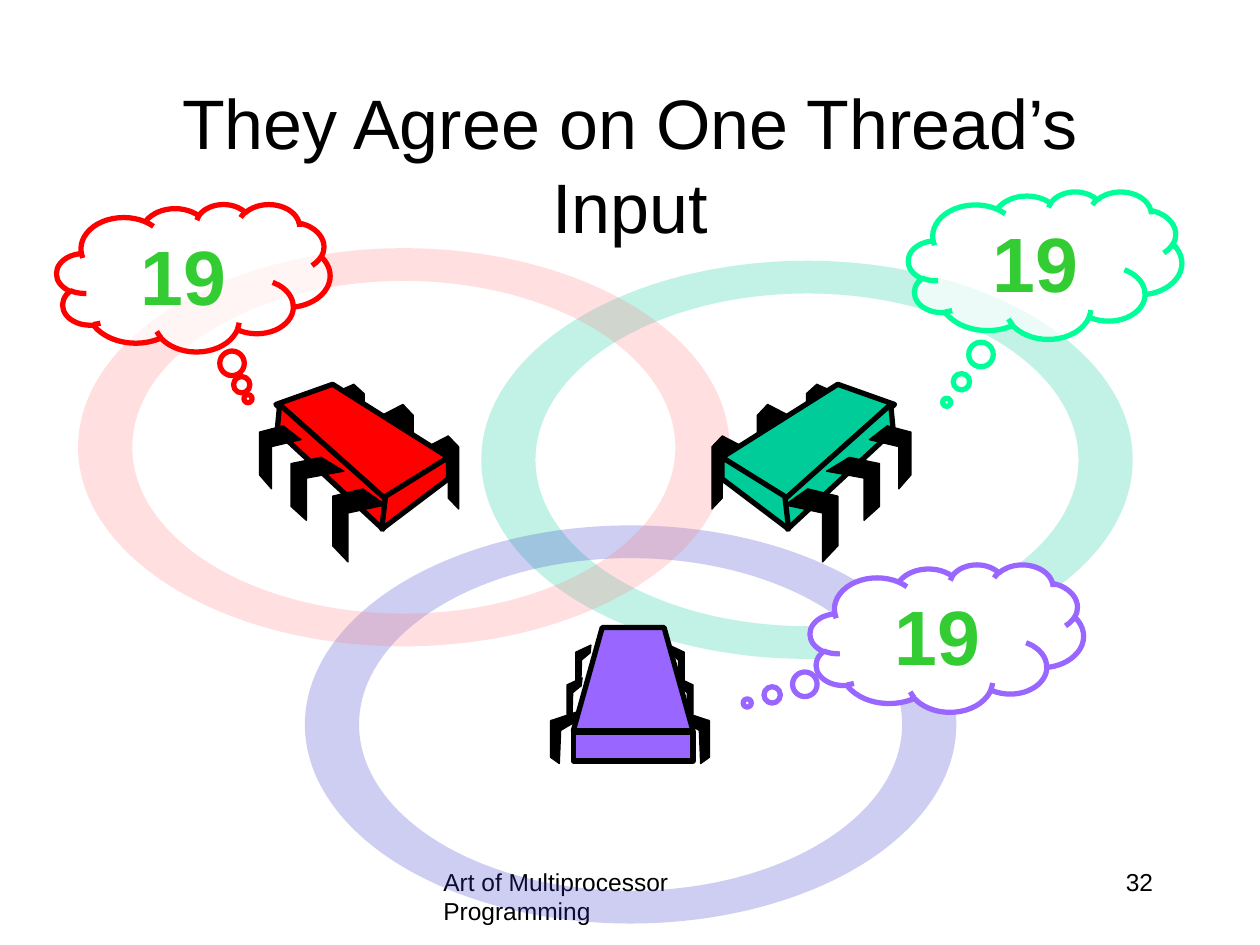
from collections import namedtuple

from lxml import etree
from pptx import Presentation
from pptx import util as u
from pptx.dml.color import RGBColor
from pptx.enum import shapes, text
from pptx.oxml.ns import qn

Box = namedtuple("Box", "left top width height")
BLACK, WHITE, VALUE_GREEN = "000000", "FFFFFF", "33CC33"
RED, GREEN, PURPLE = "FF0000", "00CC99", "9966FF"

# Outlines as fractions of the box around them
BACK_LEG = [(0, .15), (.67, 0), (1, .15), (1, 1), (.67, .85), (.67, .29), (0, .43)]
FRONT_LEG = [(.57, 0), (1, .22), (.29, .33), (.29, 1), (0, .78), (0, .1)]
SIDE_LEG = [(0, 0), (1, .17), (1, .88), (.67, 1), (.62, .36), (.06, .19)]

# Parts of a slanted spider, in inches from its top left corner
BACK_LEGS = [Box(1.33, .41, .25, .58), Box(.97, .16, .25, .58), Box(.58, 0, .25, .5)]
BODY_FACES = [
    [(.58, 0), (1.5, .58), (.98, .92), (.13, .16)],
    [(.16, .16), (1, .91), (.98, 1.15), (.14, .37)],
    [(1.5, .58), (1.5, .75), (.97, 1.15), (1, .89)],
]
FRONT_LEGS = [Box(.58, .83, .42, .58), Box(.25, .58, .42, .5), Box(0, .33, .33, .5)]


def color(value):
    return RGBColor.from_string(value)


def paint(shape, fill, line=None, weight=.75, opacity=100):
    shape.shadow.inherit = False
    shape.fill.solid()
    shape.fill.fore_color.rgb = color(fill)
    if opacity < 100:
        tint = shape.element.spPr.find(qn("a:solidFill")).find(qn("a:srgbClr"))
        etree.SubElement(tint, qn("a:alpha"), val=str(opacity * 1000))
    if line:
        shape.line.color.rgb = color(line)
        shape.line.width = u.Pt(weight)
    else:
        shape.line.fill.background()


def write(shape, words, size, align, ink=BLACK, bold=False, anchor=text.MSO_ANCHOR.TOP):
    frame = shape.text_frame
    frame.word_wrap = True
    frame.vertical_anchor = anchor
    para = frame.paragraphs[0]
    para.alignment = align
    span = para.add_run()
    span.text = words
    span.font.name = "Arial"
    span.font.size = u.Pt(size)
    span.font.bold = bold
    span.font.color.rgb = color(ink)


def add_label(page, box, words, size, align, anchor=text.MSO_ANCHOR.TOP):
    label = page.shapes.add_textbox(*map(u.Inches, box))
    write(label, words, size, align, anchor=anchor)


def add_preset(page, kind, box):
    return page.shapes.add_shape(kind, *map(u.Inches, box))


def add_outline(page, points):
    points = [(u.Inches(x), u.Inches(y)) for x, y in points]
    builder = page.shapes.build_freeform(*points[0], scale=1.0)
    builder.add_line_segments(points[1:], close=True)
    return builder.convert_to_shape()


def add_leg(page, outline, box, flipped=False):
    points = [(box.left + (1 - x if flipped else x) * box.width,
               box.top + y * box.height) for x, y in outline]
    paint(add_outline(page, points), BLACK, BLACK)


def add_ring(page, box, fill, band_x=.43, band_y=.26):
    """Draw an elliptical ring whose band is wider at the sides than above and below."""
    right, bottom = box.left + box.width, box.top + box.height
    ring = add_outline(page, [(box.left, box.top), (right, box.top),
                              (right, bottom), (box.left, bottom)])
    route = ring.element.spPr.find(".//" + qn("a:path"))
    for step in list(route):
        route.remove(step)
    middle = u.Inches(box.height / 2)
    for inset_x, inset_y, sweep in ((0, 0, 21600000), (band_x, band_y, -21600000)):
        start = etree.SubElement(route, qn("a:moveTo"))
        etree.SubElement(start, qn("a:pt"), x=str(u.Inches(inset_x)), y=str(middle))
        for half in range(2):
            etree.SubElement(route, qn("a:arcTo"),
                             wR=str(u.Inches(box.width / 2 - inset_x)),
                             hR=str(u.Inches(box.height / 2 - inset_y)),
                             stAng=str(10800000 * (1 - half)), swAng=str(sweep // 2))
        etree.SubElement(route, qn("a:close"))
    paint(ring, fill, opacity=24)


def add_thought(page, box, tail, line, opacity=100):
    cloud = add_preset(page, shapes.MSO_SHAPE.CLOUD_CALLOUT, box)
    cloud.adjustments[0], cloud.adjustments[1] = tail
    paint(cloud, WHITE, line, 3, opacity)
    write(cloud, "19", 44, text.PP_ALIGN.CENTER, VALUE_GREEN, True, text.MSO_ANCHOR.MIDDLE)


def add_slanted_spider(page, box, fill, flipped=False):
    def place_legs(outline, legs):
        for leg in legs:
            x = box.width - leg.left - leg.width if flipped else leg.left
            add_leg(page, outline, Box(box.left + x, box.top + leg.top, leg.width, leg.height),
                    flipped)

    place_legs(BACK_LEG, BACK_LEGS)
    for face in BODY_FACES:
        points = [(box.left + (box.width - x if flipped else x), box.top + y)
                  for x, y in face]
        paint(add_outline(page, points), fill, BLACK, 3)
    place_legs(FRONT_LEG, FRONT_LEGS)


def add_facing_spider(page, box, fill):
    def place_pair(top, inset, width, height):
        left = box.left + inset
        right = box.left + box.width - inset - width
        add_leg(page, SIDE_LEG, Box(right, box.top + top, width, height))
        add_leg(page, SIDE_LEG, Box(left, box.top + top, width, height), True)

    place_pair(.67, 0, .21, .41)
    place_pair(.4, .13, .12, .33)
    back = add_preset(page, shapes.MSO_SHAPE.TRAPEZOID,
                      Box(box.left + .18, box.top, .95, .82))
    back.adjustments[0] = .28
    paint(back, fill, BLACK, 3)
    front = add_preset(page, shapes.MSO_SHAPE.RECTANGLE,
                       Box(box.left + .18, box.top + .83, .95, .23))
    paint(front, fill, BLACK, 3)
    place_pair(.14, .2, .12, .33)


def main():
    deck = Presentation()
    deck.slide_width, deck.slide_height = u.Inches(10), u.Inches(7.5)
    page = deck.slides.add_slide(deck.slide_layouts[6])

    add_label(page, Box(3.42, 6.83, 3.17, .5), "Art of Multiprocessor Programming",
              14, text.PP_ALIGN.LEFT)
    add_label(page, Box(7.17, 6.83, 2.08, .5), "32", 14, text.PP_ALIGN.RIGHT)
    add_ring(page, Box(3.82, 2.07, 5.17, 3.16), GREEN)
    add_ring(page, Box(2.42, 4.17, 5.17, 3.16), "3333CC")
    add_label(page, Box(.75, .67, 8.5, 1.25), "They Agree on One Thread’s Input",
              40, text.PP_ALIGN.CENTER, text.MSO_ANCHOR.MIDDLE)
    add_ring(page, Box(.62, 1.97, 5.17, 3.16), "FF7C80")

    add_facing_spider(page, Box(4.37, 4.98, 1.26, 1.09), PURPLE)
    add_thought(page, Box(.45, 1.62, 2.17, 1.17), (.2, .82), RED, 70)
    add_thought(page, Box(7.21, 1.52, 2.17, 1.17), (-.36, .93), "00FF99", 70)
    add_slanted_spider(page, Box(2.06, 3.05, 1.58, 1.41), RED)
    add_slanted_spider(page, Box(5.65, 3.05, 1.58, 1.41), GREEN, flipped=True)
    add_thought(page, Box(6.43, 4.48, 2.17, 1.17), (-.73, .44), PURPLE)
    deck.save("out.pptx")


if __name__ == "__main__":
    main()
